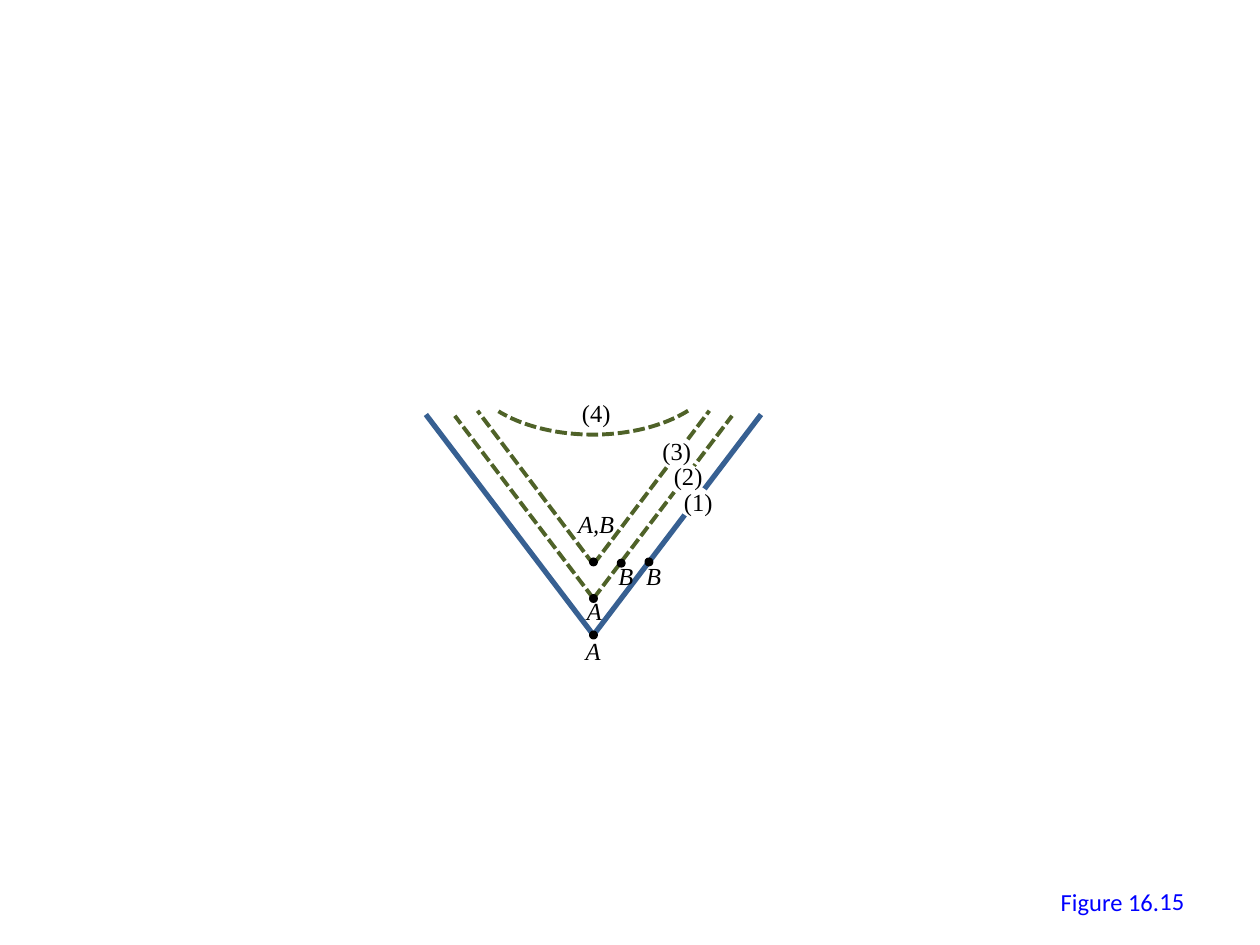
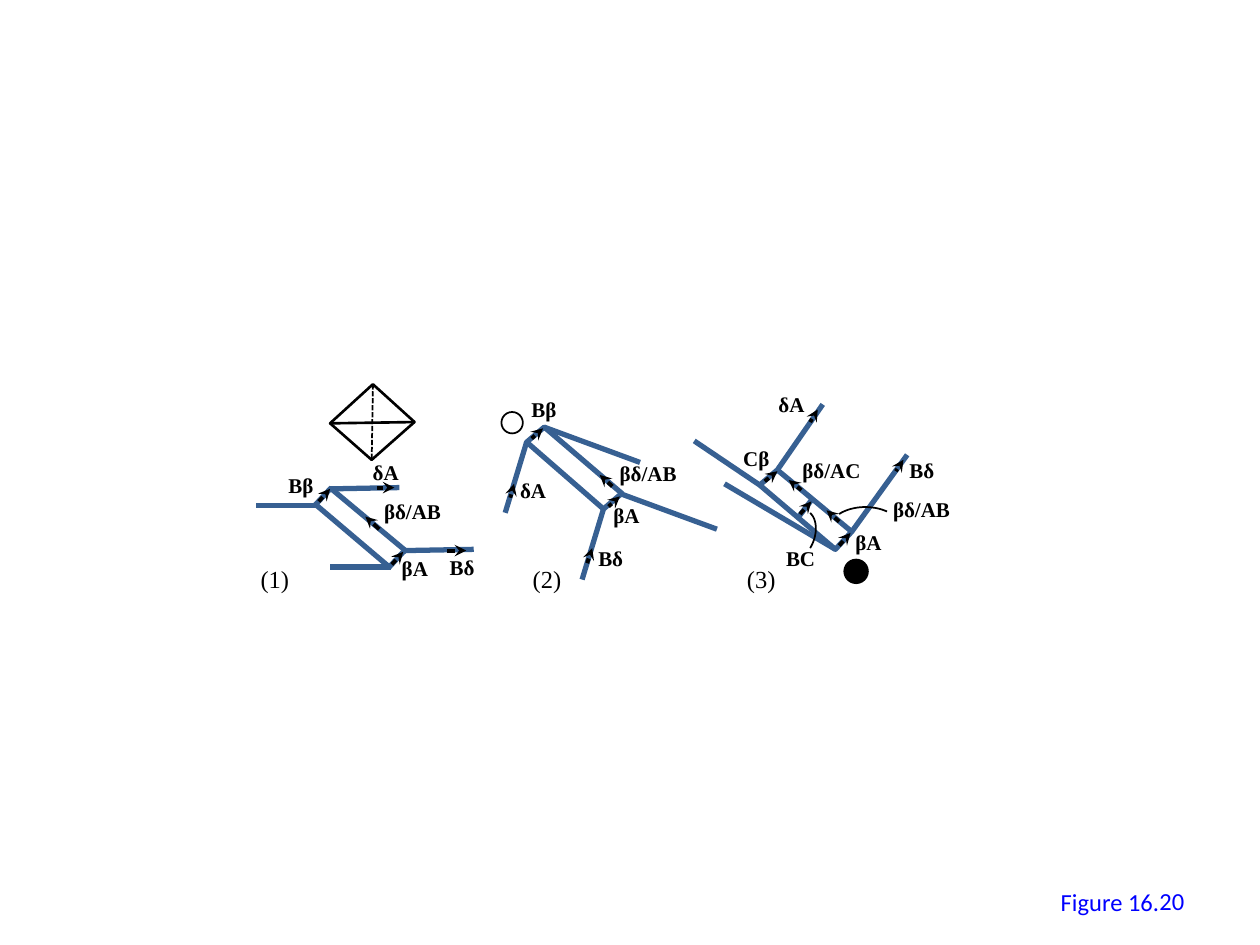
from dataclasses import dataclass

from lxml.etree import SubElement
from pptx import Presentation
from pptx.dml.color import RGBColor
from pptx.enum.dml import MSO_LINE_DASH_STYLE as Dash
from pptx.enum.shapes import MSO_CONNECTOR_TYPE as Connector, MSO_SHAPE as Shape
from pptx.enum.text import MSO_ANCHOR as Anchor, MSO_AUTO_SIZE as AutoSize, PP_ALIGN as Align
from pptx.oxml.ns import qn
from pptx.util import Cm, Pt

BLACK, WHITE = "000000", "FFFFFF"
EDGE_BLUE, FOLD_GREEN, CAPTION_BLUE = "376092", "4F6228", "0000FF"
DIAGRAM_FONT, CAPTION_FONT = "Times New Roman", "Calibri"
CAPTION_FORMAT = dict(font=CAPTION_FONT, size=14, color=CAPTION_BLUE)
LABEL_WIDTHS = {"A": 0.37, "B": 0.37, "A,B": 0.54}
DOT = 0.05


def length(units):
    """Drawing units are 2.54 cm wide."""
    return Cm(2.54 * units)


def rgb(value):
    return RGBColor.from_string(value)


@dataclass
class Box:
    left: float
    top: float

    def at(self, x, y):
        return length(self.left + x), length(self.top + y)


PAGE = Box(0, 0)


# Shared drawing helpers
def set_line(line, color, width, dash=None):
    line.color.rgb = rgb(color)
    line.width = Pt(width)
    if dash:
        line.dash_style = dash


def add_line(slide, box, start, end, color=EDGE_BLUE, width=3, dash=None, arrow=False):
    connector = slide.shapes.add_connector(Connector.STRAIGHT, *box.at(*start), *box.at(*end))
    set_line(connector.line, color, width, dash)
    properties = connector._element.spPr
    if arrow:
        SubElement(properties.find(qn("a:ln")), qn("a:tailEnd"), type="stealth")
    SubElement(properties, qn("a:effectLst"))


def add_arrow(slide, box, start, end):
    add_line(slide, box, start, end, BLACK, 2.25, arrow=True)


def add_outline(slide, box, points, color=EDGE_BLUE, width=3, close=False):
    first, *rest = [box.at(*point) for point in points]
    builder = slide.shapes.build_freeform(*first)
    builder.add_line_segments(rest, close=close)
    shape = builder.convert_to_shape()
    shape.shadow.inherit = False
    shape.fill.background()
    set_line(shape.line, color, width)


def add_shape(slide, box, kind, x, y, width, height, color, line_width, fill=None, dash=None):
    shape = slide.shapes.add_shape(kind, *box.at(x, y), length(width), length(height))
    shape.shadow.inherit = False
    set_line(shape.line, color, line_width, dash)
    if fill:
        shape.fill.solid()
        shape.fill.fore_color.rgb = rgb(fill)
    else:
        shape.fill.background()
    return shape


def write_text(frame, text, font=DIAGRAM_FONT, size=14, color=BLACK, bold=False,
               italic=False, align=Align.LEFT):
    paragraph = frame.paragraphs[0]
    paragraph.alignment = align
    run = paragraph.add_run()
    run.text = text
    run.font.name = font
    run.font.size = Pt(size)
    run.font.color.rgb = rgb(color)
    run.font.bold = bold
    run.font.italic = italic


def add_label(slide, box, text, x, y, width=None, **text_format):
    width = width or LABEL_WIDTHS.get(text, 0.67 if "/" in text else 0.43)
    height = 0.3 if text_format.get("size") == 12 else 0.34
    shape = slide.shapes.add_textbox(*box.at(x, y), length(width), length(height))
    shape.text_frame.word_wrap = False
    shape.text_frame.auto_size = AutoSize.SHAPE_TO_FIT_TEXT
    write_text(shape.text_frame, text, **text_format)


def curve(start, control_1, control_2, end, steps=16):
    """Points along a cubic curve."""
    def blend(t, a, b, c, d):
        s = 1 - t
        return s**3 * a + 3 * s * s * t * b + 3 * s * t * t * c + t**3 * d
    return [tuple(blend(i / steps, *axis) for axis in zip(start, control_1, control_2, end))
            for i in range(steps + 1)]


def add_figure_slide(presentation, number):
    slide = presentation.slides.add_slide(presentation.slide_layouts[5])
    title = slide.shapes.title
    title.left, title.top = PAGE.at(7.17, 6.95)
    title.width, title.height = length(2.33), length(0.4)
    title.text_frame.vertical_anchor = Anchor.MIDDLE
    title.text_frame.auto_size = AutoSize.NONE
    write_text(title.text_frame, number, align=Align.RIGHT, **CAPTION_FORMAT)
    add_label(slide, PAGE, "Figure 16.", 8.32, 6.99, width=0.99, **CAPTION_FORMAT)
    return slide


# Nested wedges with a shared axis
def draw_wedges(slide, box):
    axis = 1.33
    wedges = [
        (1.33, 0.19, 1.94, EDGE_BLUE, 3, None),
        (1.10, 0.20, 1.65, FOLD_GREEN, 2.25, Dash.SQUARE_DOT),
        (0.92, 0.16, 1.38, FOLD_GREEN, 2.25, Dash.SQUARE_DOT),
    ]
    for half_width, top, apex, color, width, dash in wedges:
        for side in (1, -1):
            add_line(slide, box, (axis, apex), (axis + side * half_width, top), color, width, dash)

    arc = add_shape(slide, box, Shape.ARC, 0.31, -0.79, 2.03, 1.14,
                    FOLD_GREEN, 2.25, dash=Dash.SQUARE_DOT)
    arc.adjustments[0], arc.adjustments[1] = 16.01, 91.67

    for x, y in [(axis, 1.94), (axis, 1.65), (axis, 1.36), (1.77, 1.36), (1.55, 1.37)]:
        add_shape(slide, box, Shape.OVAL, x - DOT / 2, y - DOT / 2, DOT, DOT, BLACK, 1.5, BLACK)
    for text, x, y in [("A", 1.17, 1.9), ("A", 1.18, 1.58), ("A,B", 1.11, 0.89),
                       ("B", 1.43, 1.3), ("B", 1.65, 1.3)]:
        add_label(slide, box, text, x, y, italic=True)

    # Gaps in the lines behind the numbers
    for x, y in [(2.06, 0.99), (1.98, 0.81), (1.92, 0.6)]:
        add_line(slide, box, (x, y), (x + 0.15, y - 0.21), WHITE, 4.5)
    for text, x, y in [("(4)", 1.14, 0.01), ("(3)", 1.78, 0.31),
                       ("(2)", 1.87, 0.51), ("(1)", 1.95, 0.72)]:
        add_label(slide, box, text, x, y)


# Parts common to the three numbered networks
def draw_network(slide, box, edges, arrows, labels, number):
    for points in edges:
        if len(points) == 2:
            add_line(slide, box, *points)
        else:
            add_outline(slide, box, points)
    for start, end in arrows:
        add_arrow(slide, box, start, end)
    for text, x, y in labels:
        add_label(slide, box, text, x, y, size=12, bold=True)
    add_label(slide, box, *number)


def shifted(points, dx, dy):
    return [(x + dx, y + dy) for x, y in points]


def draw_diamond(slide, box):
    left, top, right, bottom = (0, 0.31), (0.34, 0), (0.67, 0.3), (0.33, 0.6)
    add_outline(slide, box, [left, top, right, bottom], BLACK, 1.5, close=True)
    add_line(slide, box, left, right, BLACK, 1.5)
    add_line(slide, box, top, bottom, BLACK, 1, Dash.SQUARE_DOT)


def draw_network_1(slide, box):
    steps = [[(0.51, 1.01), (0.03, 1.01)], [(0.5, 1.01), (0.63, 0.87)],
             [(0.62, 0.88), (1.17, 0.87)]]
    edges = steps + [shifted(step, 0.59, 0.49) for step in steps]
    edges += [[(0.5, 1), (1.09, 1.5)], [(0.63, 0.88), (1.23, 1.38)]]
    arrows = [((0.99, 0.87), (1.13, 0.87)), ((1.55, 1.37), (1.7, 1.37)),
              ((1.01, 1.2), (0.9, 1.1)), ((1.11, 1.48), (1.2, 1.38)),
              ((0.53, 0.98), (0.62, 0.88))]
    labels = [("βA", 1.09, 1.36), ("δA", 0.86, 0.6), ("Bβ", 0.19, 0.7),
              ("βδ/AB", 0.95, 0.91), ("Bδ", 1.47, 1.35)]
    draw_network(slide, box, edges, arrows, labels, ("(1)", -0.03, 1.43))


def draw_network_2(slide, box):
    bend = [(0.01, 1.07), (0.18, 0.51), (0.32, 0.39), (1.08, 0.67)]
    edges = [bend, shifted(bend, 0.61, 0.53),
             [(0.32, 0.39), (0.94, 0.92)], [(0.17, 0.5), (0.79, 1.04)]]
    arrows = [((0.86, 0.86), (0.76, 0.77)), ((0.22, 0.48), (0.31, 0.4)),
              ((0.83, 1.02), (0.92, 0.94)), ((0.66, 1.47), (0.7, 1.35)),
              ((0.05, 0.95), (0.08, 0.84))]
    labels = [("δA", 0.03, 0.74), ("Bβ", 0.12, 0.1), ("βA", 0.77, 0.94),
              ("βδ/AB", 0.82, 0.61), ("Bδ", 0.65, 1.28)]
    draw_network(slide, box, edges, arrows, labels, ("(2)", 0.13, 1.43))
    add_shape(slide, box, Shape.OVAL, -0.02, 0.27, 0.17, 0.17, BLACK, 1)


def draw_network_3(slide, box):
    edges = [[(0.01, 0.5), (0.53, 0.85), (0.67, 0.73), (1.03, 0.21)],
             [(0.25, 0.84), (1.13, 1.36), (1.26, 1.22), (1.7, 0.61)],
             [(0.53, 0.85), (1.13, 1.36)], [(0.67, 0.73), (1.26, 1.22)],
             [(0.84, 1.1), (0.94, 0.97)]]
    arrows = [((0.93, 0.35), (0.99, 0.25)), ((1.61, 0.74), (1.67, 0.65)),
              ((0.57, 0.82), (0.67, 0.74)), ((1.16, 1.33), (1.25, 1.23)),
              ((0.85, 1.08), (0.94, 0.98)), ((0.86, 0.89), (0.76, 0.81)),
              ((1.16, 1.14), (1.06, 1.05))]
    labels = [("δA", 0.58, 0.06), ("βδ/AC", 0.77, 0.58), ("βδ/AB", 1.49, 0.89),
              ("Bδ", 1.62, 0.58), ("βA", 1.19, 1.15), ("Cβ", 0.3, 0.49), ("BC", 0.64, 1.28)]
    draw_network(slide, box, edges, arrows, labels, ("(3)", 0.33, 1.43))
    add_shape(slide, box, Shape.OVAL, 1.21, 1.45, 0.17, 0.17, BLACK, 2.25, BLACK)

    # Curved leaders to BC and βδ/AB
    for leader in [curve((0.93, 1.07), (1, 1.14), (0.98, 1.27), (0.93, 1.35)),
                   curve((1.16, 1.08), (1.27, 1.01), (1.43, 1.01), (1.54, 1.06))]:
        add_outline(slide, box, leader, BLACK, 1)


def main():
    presentation = Presentation()
    presentation.slide_width, presentation.slide_height = Cm(25.4), Cm(19.05)

    draw_wedges(add_figure_slide(presentation, "15"), Box(3.38, 3.1))

    network_slide = add_figure_slide(presentation, "20")
    draw_diamond(network_slide, Box(2.62, 3.05))
    draw_network_1(network_slide, Box(2, 3))
    draw_network_2(network_slide, Box(4, 3))
    draw_network_3(network_slide, Box(5.5, 3))

    presentation.save("out.pptx")


if __name__ == "__main__":
    main()
